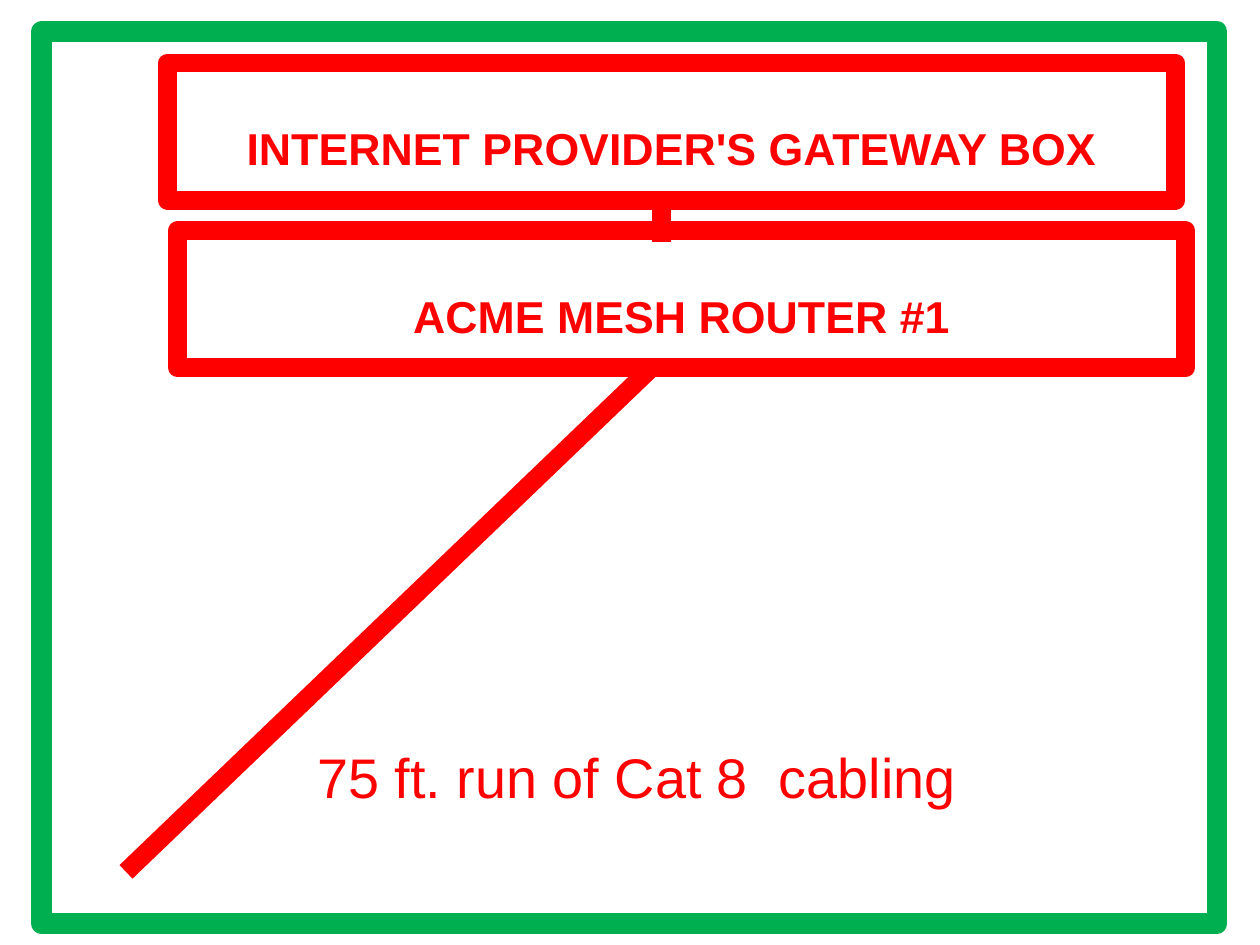
from dataclasses import dataclass

from lxml.etree import SubElement
from pptx import Presentation
from pptx.dml.color import RGBColor
from pptx.enum.shapes import MSO_CONNECTOR as Connector, MSO_SHAPE as Shape
from pptx.enum.text import MSO_ANCHOR as Anchor, PP_ALIGN as Align
from pptx.oxml.ns import qn
from pptx.util import Inches, Pt

RED = RGBColor(0xFF, 0x00, 0x00)
GREEN = RGBColor(0x00, 0xB0, 0x50)
CABLE_WIDTH = 10.75
FRAME_WIDTH = 11.75
LOWERED = "-25000"  # subscript offset in thousandths of a percent


@dataclass
class Box:
    left: float
    top: float
    width: float
    height: float
    color: RGBColor = RED
    line_width: float = CABLE_WIDTH
    label: str = ""


@dataclass
class Cable:
    start: tuple[float, float]
    end: tuple[float, float]


def write_label(frame, text: str, size: float, bold: bool, align: Align) -> None:
    frame.word_wrap = True
    frame.vertical_anchor = Anchor.TOP
    paragraph = frame.paragraphs[0]
    paragraph.alignment = align
    run = paragraph.add_run()
    run.text = text
    for name, value in {"name": "Arial", "size": Pt(size), "bold": bold}.items():
        setattr(run.font, name, value)
    run.font.color.rgb = RED
    run._r.get_or_add_rPr().set("baseline", LOWERED)


def draw_box(slide, box: Box) -> None:
    outline = slide.shapes.add_shape(
        Shape.RECTANGLE, *map(Inches, (box.left, box.top, box.width, box.height)))
    outline.shadow.inherit = False
    outline.fill.background()
    outline.line.color.rgb = box.color
    outline.line.width = Pt(box.line_width)
    if box.label:
        write_label(outline.text_frame, box.label, 44, True, Align.CENTER)


def draw_cable(slide, cable: Cable) -> None:
    line = slide.shapes.add_connector(
        Connector.STRAIGHT, *map(Inches, cable.start + cable.end))
    line.line.color.rgb = RED
    line.line.width = Pt(CABLE_WIDTH)
    SubElement(line._element.spPr, qn("a:effectLst"))


def main() -> None:
    deck = Presentation()
    deck.slide_width, deck.slide_height = Inches(10), Inches(7.5)
    slide = deck.slides.add_slide(deck.slide_layouts[6])

    # Network devices
    draw_box(slide, Box(1.33, 0.5, 8, 1.09, label="INTERNET PROVIDER'S GATEWAY BOX"))
    draw_box(slide, Box(1.41, 1.83, 8, 1.09, label="ACME MESH ROUTER #1"))

    # Gateway link, slide frame and long cable run
    draw_cable(slide, Cable((5.25, 1.59), (5.25, 1.92)))
    draw_box(slide, Box(0.33, 0.25, 9.33, 7.08, GREEN, FRAME_WIDTH))
    draw_cable(slide, Cable((5.17, 2.92), (1, 6.92)))

    # Cable caption
    caption = slide.shapes.add_textbox(*map(Inches, (2.42, 5.33, 6.58, 1.17)))
    write_label(caption.text_frame, "75 ft. run of Cat 8  cabling", 55, False, Align.LEFT)

    deck.save("out.pptx")


if __name__ == "__main__":
    main()
